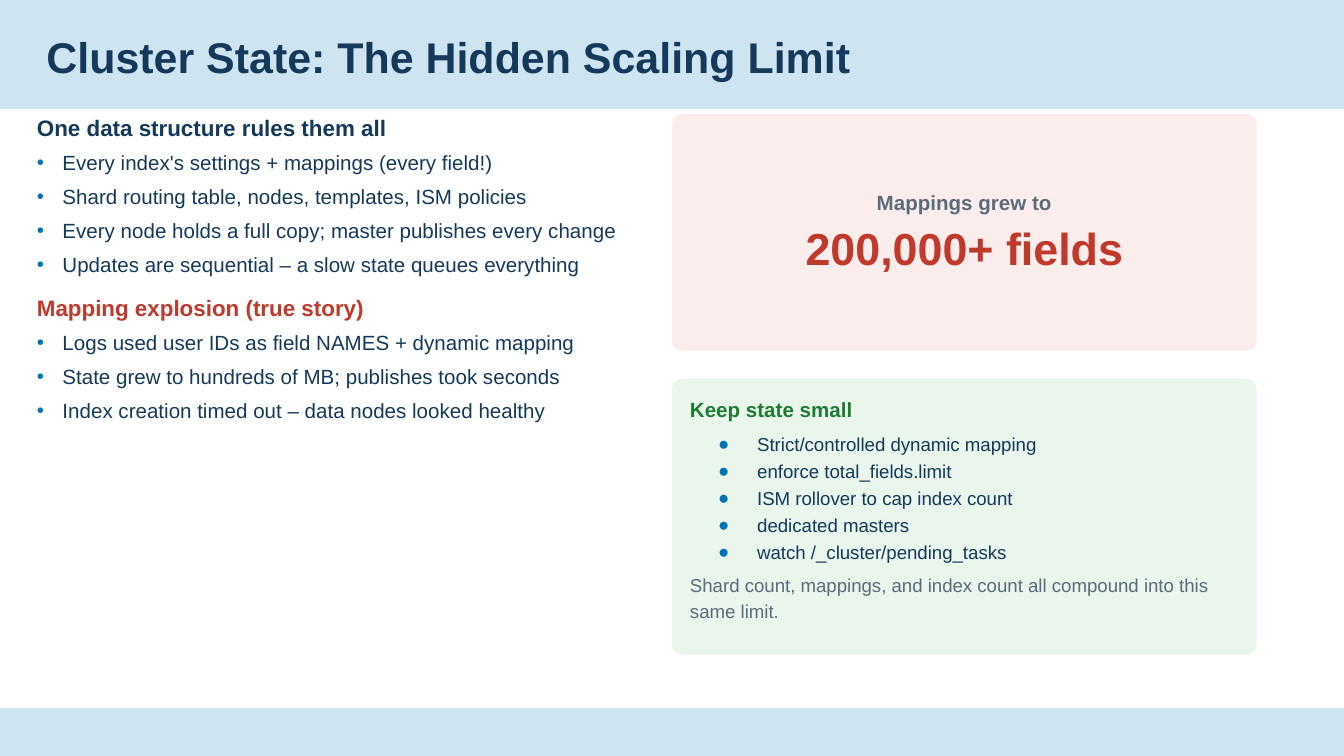
import dataclasses
import typing

import lxml.etree
import pptx
import pptx.dml.color
import pptx.enum.shapes
import pptx.enum.text
import pptx.oxml.ns
import pptx.util

SLIDE_WIDTH = pptx.util.Inches(10)
SLIDE_HEIGHT = SLIDE_WIDTH * 9 // 16
FONT = "Arial"
NAVY, BLUE, RED, GREEN, GREY = "15395A", "0073B5", "C0392B", "1E7B34", "5A6B7A"
SKY, WHITE, PINK, MINT = "CEE4F1", "FFFFFF", "FBEDEB", "EAF5EC"
TEXT_LEFT = 2.75
CONTENT_TOP = 15.1
CARD_LEFT, CARD_WIDTH = 50, 43.5


@dataclasses.dataclass(frozen=True)
class Region:
    """Percentages of the slide's width and height."""
    left: float
    top: float
    width: float
    height: float

    def lengths(self) -> tuple[int, int, int, int]:
        return (
            int(SLIDE_WIDTH * self.left / 100),
            int(SLIDE_HEIGHT * self.top / 100),
            int(SLIDE_WIDTH * self.width / 100),
            int(SLIDE_HEIGHT * self.height / 100),
        )


@dataclasses.dataclass(frozen=True)
class Bullet:
    character: str
    margin: float
    hanging: float


@dataclasses.dataclass(frozen=True)
class Line:
    text: str
    size: float
    color: str = NAVY
    bold: bool = False
    before: float = 0
    spacing: float = 1
    bullet: Bullet | None = None
    centered: bool = False


@dataclasses.dataclass(frozen=True)
class Card:
    region: Region
    fill: str
    anchor: pptx.enum.text.MSO_ANCHOR
    lines: list[Line]


DOT = Bullet("•", 0.19, 0.19)
DISC = Bullet("●", 0.5, 0.29)


def rgb(value: str) -> pptx.dml.color.RGBColor:
    return pptx.dml.color.RGBColor.from_string(value)


def points(texts: list[str]) -> list[Line]:
    return [Line(text, 11, before=5, bullet=DOT) for text in texts]


def add_bullet(paragraph: typing.Any, bullet: Bullet) -> None:
    properties = paragraph._p.get_or_add_pPr()
    properties.set("marL", str(pptx.util.Inches(bullet.margin)))
    properties.set("indent", str(-pptx.util.Inches(bullet.hanging)))
    qualified = pptx.oxml.ns.qn
    color = lxml.etree.SubElement(properties, qualified("a:buClr"))
    lxml.etree.SubElement(color, qualified("a:srgbClr"), val=BLUE)
    lxml.etree.SubElement(properties, qualified("a:buFont"), typeface=FONT)
    lxml.etree.SubElement(properties, qualified("a:buChar"), char=bullet.character)


def write_lines(
    shape: typing.Any,
    lines: list[Line],
    insets: tuple[float, float],
    anchor: pptx.enum.text.MSO_ANCHOR = pptx.enum.text.MSO_ANCHOR.TOP,
) -> None:
    text_frame = shape.text_frame
    text_frame.word_wrap = True
    text_frame.vertical_anchor = anchor
    text_frame.margin_left = text_frame.margin_right = pptx.util.Inches(insets[0])
    text_frame.margin_top = text_frame.margin_bottom = pptx.util.Inches(insets[1])
    text_frame.text = "\n".join(line.text for line in lines)
    alignments = pptx.enum.text.PP_ALIGN
    for paragraph, line in zip(text_frame.paragraphs, lines):
        if line.bullet:
            add_bullet(paragraph, line.bullet)
        paragraph.alignment = alignments.CENTER if line.centered else alignments.LEFT
        paragraph.line_spacing = line.spacing
        paragraph.space_before = pptx.util.Pt(line.before)
        for run in paragraph.runs:
            run.font.name = FONT
            run.font.size = pptx.util.Pt(line.size)
            run.font.bold = line.bold
            run.font.color.rgb = rgb(line.color)


def add_panel(
    slide: typing.Any, kind: pptx.enum.shapes.MSO_SHAPE, region: Region, fill: str
) -> typing.Any:
    shape = slide.shapes.add_shape(kind, *region.lengths())
    shape.shadow.inherit = False
    shape.fill.solid()
    shape.fill.fore_color.rgb = rgb(fill)
    shape.line.fill.background()
    return shape


def add_text(
    slide: typing.Any, region: Region, lines: list[Line], insets: tuple[float, float]
) -> None:
    write_lines(slide.shapes.add_textbox(*region.lengths()), lines, insets)


def add_card(slide: typing.Any, card: Card) -> None:
    shape = add_panel(
        slide, pptx.enum.shapes.MSO_SHAPE.ROUNDED_RECTANGLE, card.region, card.fill
    )
    shape.adjustments[0] = 0.04
    write_lines(shape, card.lines, (0.11, 0.11), card.anchor)


TITLE = [Line("Cluster State: The Hidden Scaling Limit", 23, bold=True, spacing=0.9)]
STORY = [
    Line("One data structure rules them all", 12, bold=True),
    *points([
        "Every index's settings + mappings (every field!)",
        "Shard routing table, nodes, templates, ISM policies",
        "Every node holds a full copy; master publishes every change",
        "Updates are sequential – a slow state queues everything",
    ]),
    Line("Mapping explosion (true story)", 12, RED, bold=True, before=9),
    *points([
        "Logs used user IDs as field NAMES + dynamic mapping",
        "State grew to hundreds of MB; publishes took seconds",
        "Index creation timed out – data nodes looked healthy",
    ]),
]
ADVICE = [
    "Strict/controlled dynamic mapping",
    "enforce total_fields.limit",
    "ISM rollover to cap index count",
    "dedicated masters",
    "watch /_cluster/pending_tasks",
]
CARDS = [
    Card(
        Region(CARD_LEFT, CONTENT_TOP, CARD_WIDTH, 31.3),
        PINK,
        pptx.enum.text.MSO_ANCHOR.MIDDLE,
        [
            Line("Mappings grew to", 11, GREY, bold=True, centered=True),
            Line("200,000+ fields", 24, RED, bold=True, before=3, centered=True),
        ],
    ),
    Card(
        Region(CARD_LEFT, 50.1, CARD_WIDTH, 36.5),
        MINT,
        pptx.enum.text.MSO_ANCHOR.TOP,
        [
            Line("Keep state small", 11, GREEN, bold=True),
            *(
                Line(text, 10, before=0 if index else 4, spacing=1.2, bullet=DISC)
                for index, text in enumerate(ADVICE)
            ),
            Line(
                "Shard count, mappings, and index count all compound into this same limit.",
                10, GREY, before=4, spacing=1.15,
            ),
        ],
    ),
]


def main() -> None:
    presentation = pptx.Presentation()
    presentation.slide_width = SLIDE_WIDTH
    presentation.slide_height = SLIDE_HEIGHT
    slide = presentation.slides.add_slide(presentation.slide_layouts[6])
    slide.background.fill.solid()
    slide.background.fill.fore_color.rgb = rgb(SKY)
    add_panel(
        slide, pptx.enum.shapes.MSO_SHAPE.RECTANGLE, Region(0, 14.4, 100, 79.3), WHITE
    )
    add_text(slide, Region(TEXT_LEFT, 4.1, 88.9, 5.9), TITLE, (0.07, 0.04))
    add_text(slide, Region(TEXT_LEFT, CONTENT_TOP, 44.3, 71.5), STORY, (0, 0))
    for card in CARDS:
        add_card(slide, card)
    presentation.save("out.pptx")


if __name__ == "__main__":
    main()
